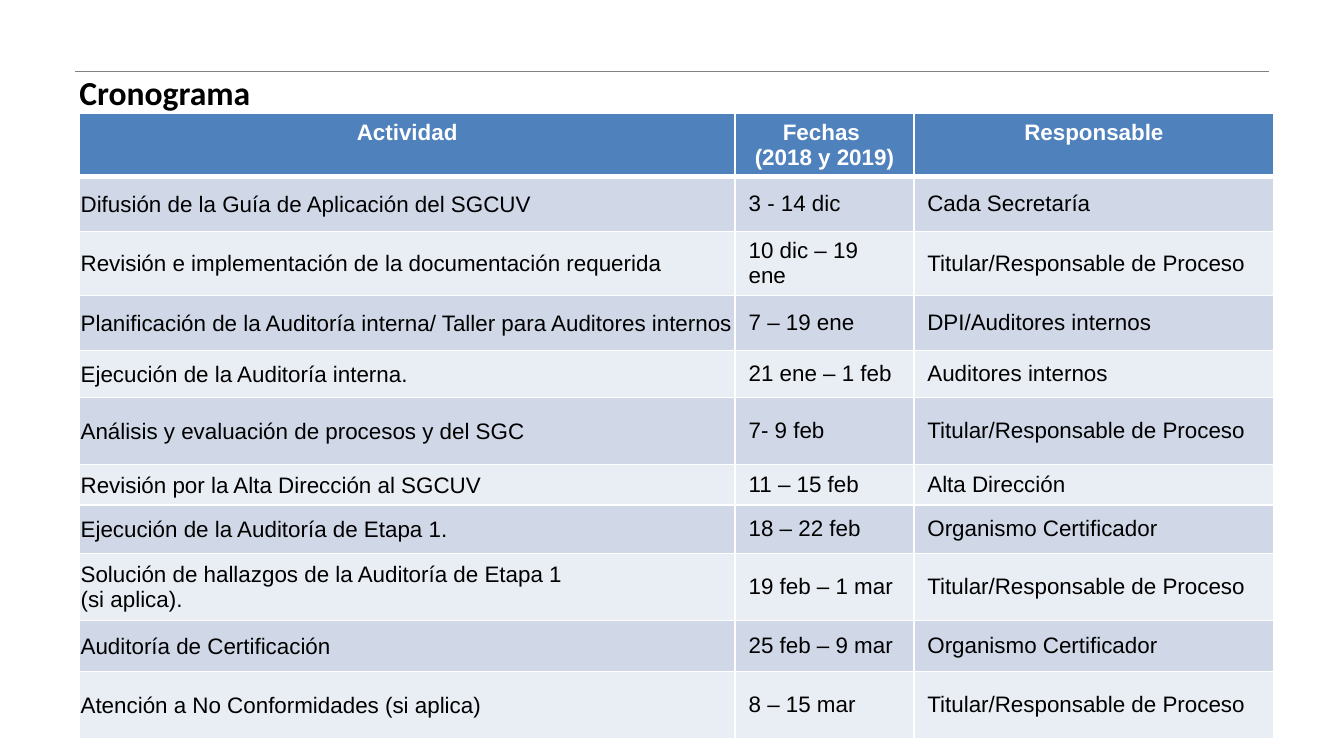
from dataclasses import dataclass

from lxml import etree
from pptx import Presentation
from pptx import util as u
from pptx.dml.color import RGBColor
from pptx.enum import shapes, text
from pptx.oxml import ns

COLUMNS = 1000
CELL = u.Inches(0.01)  # one step of the page grid, in both directions
PAGE_WIDTH = COLUMNS * CELL
PAGE_HEIGHT = PAGE_WIDTH * 9 // 16
WHITE, BLACK, GREY = "FFFFFF", "000000", "808080"
HEADER_FILL = "4F81BD"
BAND_FILLS = ("D0D8E8", "E9EDF4")
COLUMN_WIDTHS = (488, 133, 268)
HEADER_HEIGHT = 41
TITLE_FONT = {"name": "Calibri", "size": u.Pt(18), "bold": True}
HEADER_FONT = {"name": "Arial", "size": u.Pt(12), "bold": True}
BODY_FONT = {**HEADER_FONT, "bold": False}
TIGHT_MARGINS = {"margin_left": CELL, "margin_top": CELL,
                 "margin_right": CELL, "margin_bottom": 0}


@dataclass
class Activity:
    name: str
    dates: str
    owner: str
    height: int


OWNER = "Titular/Responsable de Proceso"
CERTIFIER = "Organismo Certificador"
HEADINGS = ("Actividad", "Fechas \n(2018 y 2019)", "Responsable")
ACTIVITIES = [
    Activity("Difusión de la Guía de Aplicación del SGCUV", "3 - 14 dic", "Cada Secretaría", 41),
    Activity("Revisión e implementación de la documentación requerida", "10 dic – 19 ene", OWNER, 43),
    Activity("Planificación de la Auditoría interna/ Taller para Auditores internos",
             "7 – 19 ene", "DPI/Auditores internos", 41),
    Activity("Ejecución de la Auditoría interna.", "21 ene – 1 feb", "Auditores internos", 35),
    Activity("Análisis y evaluación de procesos y del SGC", "7- 9 feb", OWNER, 50),
    Activity("Revisión por la Alta Dirección al SGCUV", "11 – 15 feb", "Alta Dirección", 30),
    Activity("Ejecución de la Auditoría de Etapa 1.", "18 – 22 feb", CERTIFIER, 36),
    Activity("Solución de hallazgos de la Auditoría de Etapa 1\n(si aplica).",
             "19 feb – 1 mar", OWNER, 50),
    Activity("Auditoría de Certificación", "25 feb – 9 mar", CERTIFIER, 38),
    Activity("Atención a No Conformidades (si aplica)", "8 – 15 mar", OWNER, 50),
]


def grid(*counts: int) -> list[int]:
    return [count * CELL for count in counts]


def colour(value: str) -> RGBColor:
    return RGBColor.from_string(value)


def apply(target, values: dict) -> None:
    for name, value in values.items():
        setattr(target, name, value)


def write(frame, words: str, font: dict, ink: str, align) -> None:
    frame.text = words
    for para in frame.paragraphs:
        para.alignment = align
        for span in para.runs:
            apply(span.font, font)
            span.font.color.rgb = colour(ink)


def set_borders(cell, top: float = 1, bottom: float = 1) -> None:
    """Put white borders, in points, ahead of the cell's fill."""
    properties = cell._tc.get_or_add_tcPr()
    widths = {"a:lnL": 1, "a:lnR": 1, "a:lnT": top, "a:lnB": bottom}
    for place, (tag, width) in enumerate(widths.items()):
        border = etree.Element(ns.qn(tag), w=str(u.Pt(width)))
        fill = etree.SubElement(border, ns.qn("a:solidFill"))
        etree.SubElement(fill, ns.qn("a:srgbClr"), val=WHITE)
        properties.insert(place, border)


def fill_cell(cell, words: str, font: dict, ink: str, align, fill: str) -> None:
    write(cell.text_frame, words, font, ink, align)
    cell.fill.solid()
    cell.fill.fore_color.rgb = colour(fill)


def draw_rule(page) -> None:
    rule = page.shapes.add_connector(shapes.MSO_CONNECTOR.STRAIGHT, *grid(56, 53, 944, 53))
    rule.line.color.rgb = colour(GREY)
    rule.line.width = u.Pt(0.75)
    etree.SubElement(rule._element.spPr, ns.qn("a:effectLst"))


def draw_title(page) -> None:
    title = page.shapes.title
    apply(title, dict(zip(("left", "top", "width", "height"), grid(51, 53, 879, 31))))
    frame = title.text_frame
    apply(frame, {"margin_left": 8 * CELL, "margin_right": 8 * CELL,
                  "margin_top": 4 * CELL, "margin_bottom": 4 * CELL,
                  "vertical_anchor": text.MSO_ANCHOR.MIDDLE,
                  "auto_size": text.MSO_AUTO_SIZE.NONE})
    write(frame, "Cronograma", TITLE_FONT, BLACK, text.PP_ALIGN.LEFT)


def draw_schedule(page) -> None:
    heights = [HEADER_HEIGHT] + [activity.height for activity in ACTIVITIES]
    table = page.shapes.add_table(len(heights), len(COLUMN_WIDTHS),
                                  *grid(59, 84, sum(COLUMN_WIDTHS), sum(heights))).table
    for column, width in zip(table.columns, grid(*COLUMN_WIDTHS)):
        column.width = width
    for row, height in zip(table.rows, grid(*heights)):
        row.height = height

    for cell, heading in zip(table.rows[0].cells, HEADINGS):
        fill_cell(cell, heading, HEADER_FONT, WHITE, text.PP_ALIGN.CENTER, HEADER_FILL)
        set_borders(cell, bottom=3)

    for index, activity in enumerate(ACTIVITIES):
        cells = list(table.rows[index + 1].cells)
        for cell, words in zip(cells, (activity.name, activity.dates, activity.owner)):
            fill_cell(cell, words, BODY_FONT, BLACK, text.PP_ALIGN.LEFT, BAND_FILLS[index % 2])
            cell.vertical_anchor = text.MSO_ANCHOR.MIDDLE
            set_borders(cell, top=3 if index == 0 else 1)
        apply(cells[0], TIGHT_MARGINS)


def main() -> None:
    deck = Presentation()
    apply(deck, {"slide_width": PAGE_WIDTH, "slide_height": PAGE_HEIGHT})
    page = deck.slides.add_slide(deck.slide_layouts.get_by_name("Title Only"))
    draw_rule(page)
    draw_title(page)
    draw_schedule(page)
    deck.save("out.pptx")


if __name__ == "__main__":
    main()
